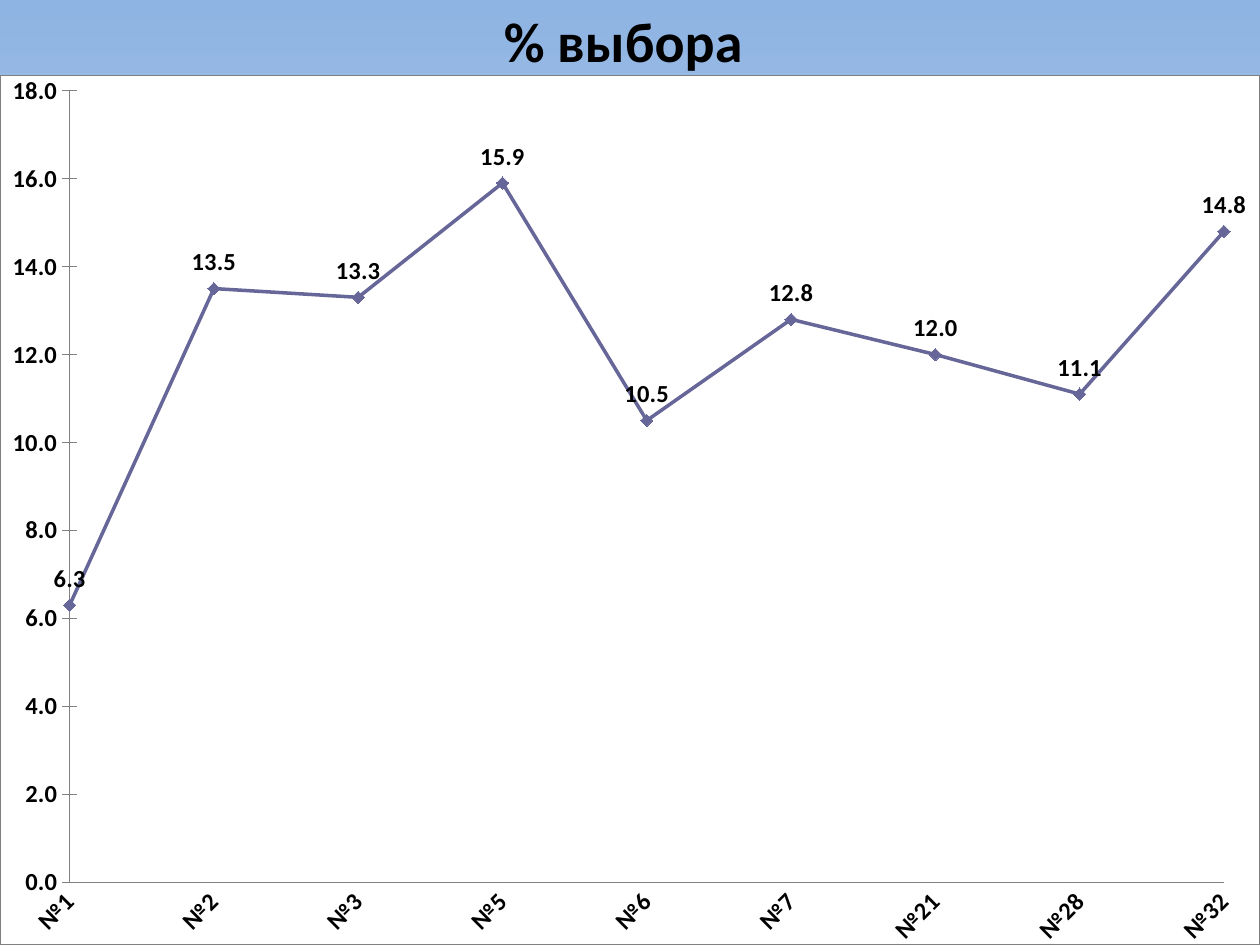
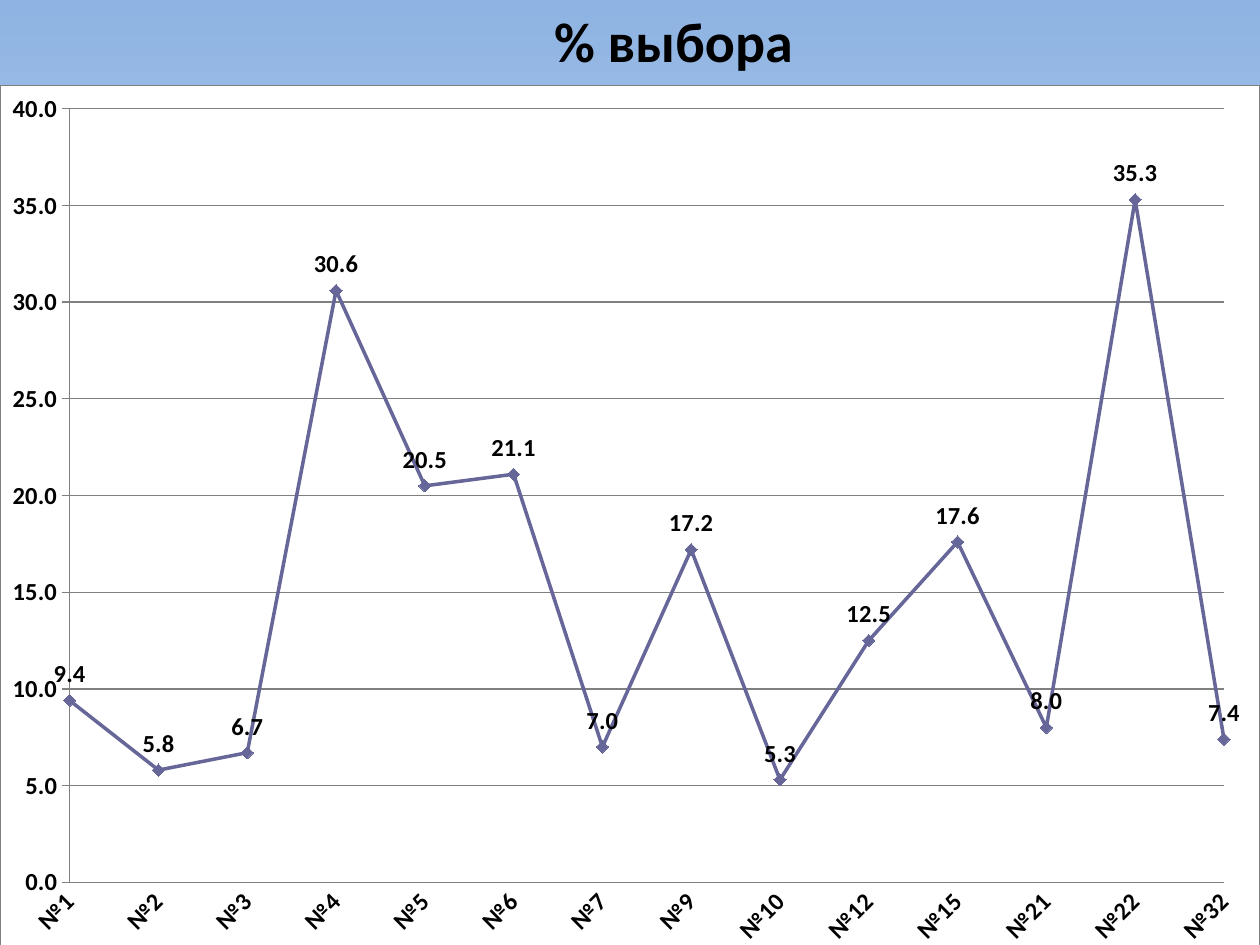
import copy
from dataclasses import dataclass

import lxml.etree
import pptx
import pptx.chart.axis
import pptx.chart.chart
import pptx.chart.data
import pptx.dml.color
import pptx.dml.line
import pptx.enum.chart
import pptx.enum.text
import pptx.oxml
import pptx.oxml.ns
import pptx.slide
import pptx.text.text
import pptx.util

RGBColor = pptx.dml.color.RGBColor
Pt = pptx.util.Pt
qn = pptx.oxml.ns.qn

BLACK = RGBColor(0x00, 0x00, 0x00)
WHITE = RGBColor(0xFF, 0xFF, 0xFF)
GRAY = RGBColor(0x80, 0x80, 0x80)
VIOLET = RGBColor(0x66, 0x66, 0x99)
SKY = [
    (0.0, RGBColor(0x8E, 0xB4, 0xE3)),
    (0.5, RGBColor(0xC2, 0xD1, 0xED)),
    (1.0, RGBColor(0xE1, 0xE8, 0xF5)),
]
FONT = "Calibri"
NUMBER_FORMAT = "0.0"
TITLE = "% выбора"
TITLE_W, TITLE_H = 0.21, 0.085  # shares of the slide

W, H = pptx.util.Inches(10), pptx.util.Inches(7.5)


@dataclass
class ChoiceSlide:
    """One line chart; title_left and chart_top are shares of the slide."""
    title_left: float
    chart_top: float
    plot: tuple[float, float, float, float]
    top_value: float
    step: float
    gridlines: bool
    choices: dict[int, float]


SLIDES = [
    ChoiceSlide(0.39, 0.08, (0.01, 0, 0.97, 1), 18, 2, False,
                {1: 6.3, 2: 13.5, 3: 13.3, 5: 15.9, 6: 10.5, 7: 12.8,
                 21: 12.0, 28: 11.1, 32: 14.8}),
    ChoiceSlide(0.43, 0.09, (0.01, 0.01, 0.97, 0.99), 40, 5, True,
                {1: 9.4, 2: 5.8, 3: 6.7, 4: 30.6, 5: 20.5, 6: 21.1, 7: 7.0,
                 9: 17.2, 10: 5.3, 12: 12.5, 15: 17.6, 21: 8.0, 22: 35.3,
                 32: 7.4}),
]


def style_font(font: pptx.text.text.Font, size: float, bold: bool = True) -> None:
    font.name, font.size, font.bold = FONT, Pt(size), bold
    font.color.rgb = BLACK


def style_hairline(line: pptx.dml.line.LineFormat) -> None:
    line.color.rgb = GRAY
    line.width = 0


def paint_background(slide: pptx.slide.Slide) -> None:
    fill = slide.background.fill
    fill.gradient()
    fill.gradient_angle = 270
    stops = slide.element.find(".//" + qn("a:gsLst"))
    stops.append(copy.deepcopy(stops[-1]))
    for stop, (position, color) in zip(fill.gradient_stops, SKY):
        stop.position = position
        stop.color.rgb = color


def add_title(slide: pptx.slide.Slide, left: float) -> None:
    sp = slide.shapes.add_textbox(int(W * left), 0, int(W * TITLE_W), int(H * TITLE_H))
    tf = sp.text_frame
    tf.word_wrap = False
    tf.auto_size = pptx.enum.text.MSO_AUTO_SIZE.SHAPE_TO_FIT_TEXT
    r = tf.paragraphs[0].add_run()
    r.text = TITLE
    style_font(r.font, 32)


def area_properties(border: RGBColor | None) -> lxml.etree._Element:
    """White fill with a hairline border, or with none."""
    fill = '<a:solidFill><a:srgbClr val="{}"/></a:solidFill>'
    line = fill.format(border) if border else "<a:noFill/>"
    return pptx.oxml.parse_xml(
        f'<c:spPr {pptx.oxml.ns.nsdecls("c", "a")}>{fill.format(WHITE)}'
        f'<a:ln w="0">{line}</a:ln></c:spPr>')


def place_plot(chart: pptx.chart.chart.Chart,
               plot: tuple[float, float, float, float]) -> None:
    """Paint the chart areas and set the outer plot box as shares of the chart."""
    space = chart.element
    space.find(qn("c:txPr")).addprevious(area_properties(GRAY))
    area = space.find(".//" + qn("c:plotArea"))
    area.append(area_properties(None))
    for old in area.findall(qn("c:layout")):
        area.remove(old)
    settings = [("layoutTarget", "outer"), ("xMode", "edge"), ("yMode", "edge"),
                *zip("xywh", plot)]
    layout = lxml.etree.Element(qn("c:layout"))
    manual = lxml.etree.SubElement(layout, qn("c:manualLayout"))
    for name, value in settings:
        lxml.etree.SubElement(manual, qn(f"c:{name}")).set("val", str(value))
    area.insert(0, layout)


def style_axes(chart: pptx.chart.chart.Chart, spec_: ChoiceSlide) -> None:
    marks = pptx.enum.chart.XL_TICK_MARK
    cat, val = chart.category_axis, chart.value_axis
    for axis, mark in ((cat, marks.NONE), (val, marks.CROSS)):
        axis.major_tick_mark, axis.minor_tick_mark = mark, marks.NONE
        style_font(axis.tick_labels.font, 14)
        style_hairline(axis.format.line)
    cat.has_major_gridlines = False
    body = cat._element.find(qn("c:txPr")).find(qn("a:bodyPr"))
    body.set("rot", str(-45 * 60000))
    body.set("vert", "horz")

    val.minimum_scale, val.maximum_scale = 0, spec_.top_value
    val.tick_labels.number_format = NUMBER_FORMAT
    val.tick_labels.number_format_is_linked = False
    val.has_major_gridlines = spec_.gridlines
    if spec_.gridlines:
        style_hairline(val.major_gridlines.format.line)
    start_on_axis(val)
    val.major_unit = spec_.step


def start_on_axis(val: pptx.chart.axis.ValueAxis) -> None:
    """Let the first point sit on the value axis itself."""
    ax = val._element
    for old in ax.findall(qn("c:crossBetween")):
        ax.remove(old)
    between = lxml.etree.Element(qn("c:crossBetween"))
    between.set("val", "midCat")
    ax.find(qn("c:crosses")).addnext(between)


def style_series(chart: pptx.chart.chart.Chart) -> None:
    series = chart.plots[0].series[0]
    series.smooth = False
    series.format.line.color.rgb = VIOLET
    series.format.line.width = Pt(2)
    marker = series.marker
    marker.style = pptx.enum.chart.XL_MARKER_STYLE.DIAMOND
    marker.size = 7
    marker.format.fill.solid()
    marker.format.fill.fore_color.rgb = VIOLET
    marker.format.line.color.rgb = VIOLET
    labels = series.data_labels
    labels.show_value = True
    labels.position = pptx.enum.chart.XL_LABEL_POSITION.ABOVE
    labels.number_format = NUMBER_FORMAT
    labels.number_format_is_linked = False
    style_font(labels.font, 14)


def add_choice_chart(slide: pptx.slide.Slide, item: ChoiceSlide) -> None:
    data = pptx.chart.data.CategoryChartData(number_format=NUMBER_FORMAT)
    data.categories = [f"№{number}" for number in item.choices]
    data.add_series("Series 1", item.choices.values())
    top = int(H * item.chart_top)
    chart = slide.shapes.add_chart(
        pptx.enum.chart.XL_CHART_TYPE.LINE_MARKERS_STACKED,
        0, top, W, H - top, data).chart
    chart.has_title = chart.has_legend = False
    chart.plots[0].vary_by_categories = False
    style_font(chart.font, 10, bold=False)
    style_axes(chart, item)
    style_series(chart)
    place_plot(chart, item.plot)


def main() -> None:
    prs = pptx.Presentation()
    prs.slide_width, prs.slide_height = W, H
    for item in SLIDES:
        slide = prs.slides.add_slide(prs.slide_layouts[6])
        paint_background(slide)
        add_title(slide, item.title_left)
        add_choice_chart(slide, item)
    prs.save("out.pptx")


if __name__ == "__main__":
    main()
